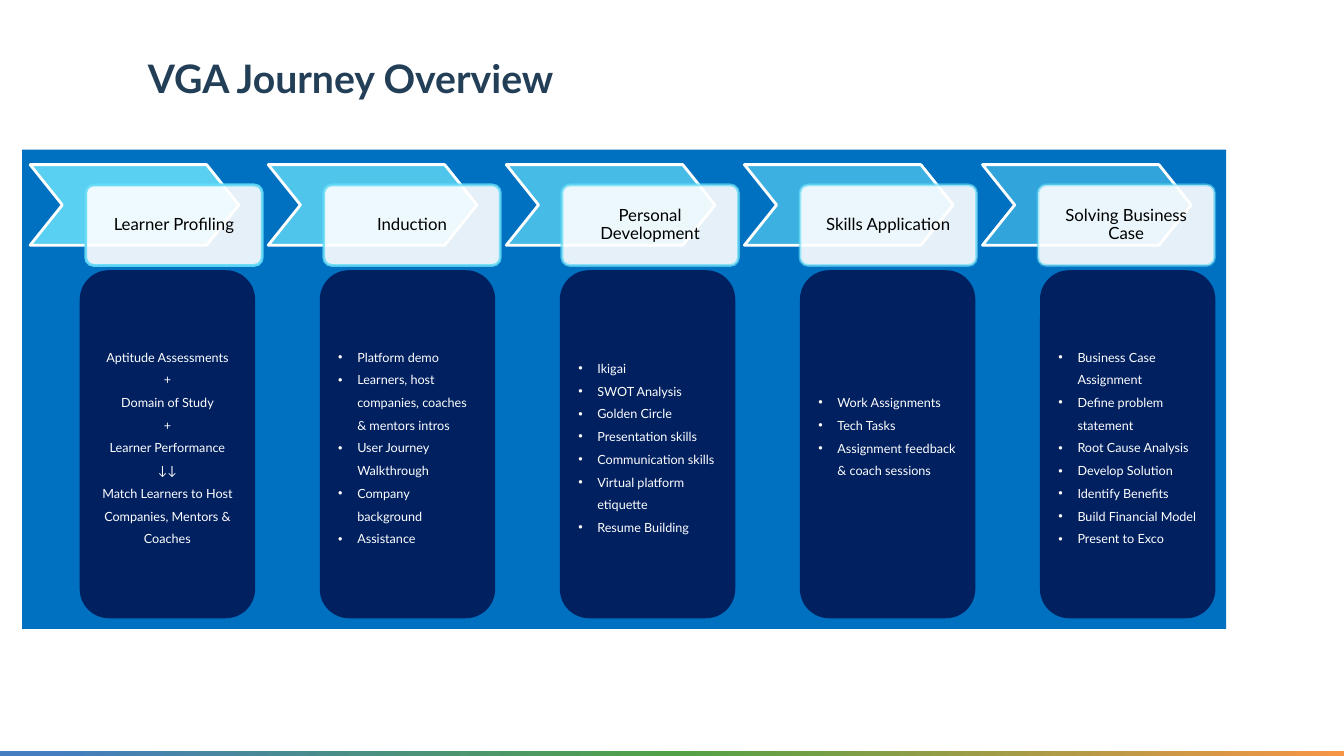
import copy

import lxml.etree
import pptx
import pptx.dml.color
import pptx.enum.shapes
import pptx.enum.text
import pptx.oxml.ns
import pptx.util

Cm = pptx.util.Cm
Pt = pptx.util.Pt
qn = pptx.oxml.ns.qn
SHAPE = pptx.enum.shapes.MSO_SHAPE
ALIGN = pptx.enum.text.PP_ALIGN
MIDDLE = pptx.enum.text.MSO_ANCHOR.MIDDLE

STAGES = [
    ("Learner Profiling", False,
     ["Aptitude Assessments", "+", "Domain of Study", "+", "Learner Performance", "↓↓",
      "Match Learners to Host Companies, Mentors & Coaches"]),
    ("Induction", True,
     ["Platform demo", "Learners, host companies, coaches & mentors intros",
      "User Journey Walkthrough", "Company background", "Assistance"]),
    ("Personal Development", True,
     ["Ikigai", "SWOT Analysis", "Golden Circle", "Presentation skills",
      "Communication skills", "Virtual platform etiquette", "Resume Building"]),
    ("Skills Application", True,
     ["Work Assignments", "Tech Tasks", "Assignment feedback & coach sessions"]),
    ("Solving Business Case", True,
     ["Business Case Assignment", "Define problem statement", "Root Cause Analysis",
      "Develop Solution", "Identify Benefits", "Build Financial Model", "Present to Exco"]),
]


def rgb(color):
    """Turn a hex string into a colour."""
    return pptx.dml.color.RGBColor.from_string(color)


def set_alpha(fill_parent, percent):
    """Make the solid fill held by an element partly transparent."""
    clr = fill_parent.find(qn("a:solidFill"))[0]
    lxml.etree.SubElement(clr, qn("a:alpha")).set("val", str(percent * 1000))


def add_box(slide, kind, x, y, w, h, fill, alpha=100, line=None, line_alpha=100):
    """Add a flat preset shape, measured in centimetres."""
    sp = slide.shapes.add_shape(kind, Cm(x), Cm(y), Cm(w), Cm(h))
    sp.shadow.inherit = False
    sp.fill.solid()
    sp.fill.fore_color.rgb = rgb(fill)
    if alpha < 100:
        set_alpha(sp._element.spPr, alpha)
    if line:
        sp.line.color.rgb = rgb(line)
        sp.line.width = Pt(2)
        if line_alpha < 100:
            set_alpha(sp.line._ln, line_alpha)
    else:
        sp.line.fill.background()
    return sp


def style(p, size, color, align, spacing=1.0, bold=False):
    """Format a paragraph and its runs."""
    p.alignment = align
    p.line_spacing = spacing
    for r in p.runs:
        r.font.name = "Lato"
        r.font.size = Pt(size)
        r.font.bold = bold
        r.font.color.rgb = rgb(color)


def add_bullet(p):
    """Give a paragraph a hanging white bullet."""
    pPr = p._p.get_or_add_pPr()
    pPr.set("marL", str(Cm(0.48)))
    pPr.set("indent", str(-Cm(0.48)))
    clr = lxml.etree.SubElement(pPr, qn("a:buClr"))
    lxml.etree.SubElement(clr, qn("a:srgbClr")).set("val", "FFFFFF")
    lxml.etree.SubElement(pPr, qn("a:buFont")).set("typeface", "Arial")
    lxml.etree.SubElement(pPr, qn("a:buChar")).set("char", "•")


def add_footer_bar(slide, x, y, w, h):
    """Draw the three-colour gradient strip."""
    sp = add_box(slide, SHAPE.RECTANGLE, x, y, w, h, "51A246")
    sp.fill.gradient()
    sp.fill.gradient_angle = 0
    stops = sp._element.spPr.find(qn("a:gradFill")).find(qn("a:gsLst"))
    stops.append(copy.deepcopy(stops[-1]))
    colors = [(0.04, "457DC0"), (0.5, "51A246"), (1, "F79546")]
    for stop, (position, color) in zip(sp.fill.gradient_stops, colors):
        stop.position = position
        stop.color.rgb = rgb(color)


def add_title(slide, x, y, w, h, text):
    """Write the slide title."""
    tf = slide.shapes.add_textbox(Cm(x), Cm(y), Cm(w), Cm(h)).text_frame
    tf.word_wrap = True
    tf.vertical_anchor = MIDDLE
    tf.margin_left = tf.margin_right = tf.margin_top = tf.margin_bottom = 0
    tf.text = text
    style(tf.paragraphs[0], 28, "233F57", ALIGN.LEFT, bold=True)


def add_step(slide, x, y, text, alpha):
    """Draw a chevron with its overlapping label."""
    sp = add_box(slide, SHAPE.CHEVRON, x, y, 5.26, 2.03, "63DBF7", alpha, "FFFFFF")
    sp.adjustments[0] = 0.4
    sp = add_box(slide, SHAPE.ROUNDED_RECTANGLE, x + 1.4, y + 0.51, 4.45, 2.03,
                 "FFFFFF", 90, "63DBF7", alpha)
    sp.adjustments[0] = 0.1
    tf = sp.text_frame
    tf.word_wrap = True
    tf.vertical_anchor = MIDDLE
    tf.margin_left = tf.margin_right = tf.margin_top = tf.margin_bottom = Cm(0.23)
    tf.text = text
    style(tf.paragraphs[0], 12, "000000", ALIGN.CENTER, 0.9)


def add_card(slide, x, y, w, h, lines, bulleted, lift=0):
    """Draw a dark card of details, raising its text by half the lift."""
    tf = add_box(slide, SHAPE.ROUNDED_RECTANGLE, x, y, w, h, "002060").text_frame
    tf.word_wrap = True
    tf.vertical_anchor = MIDDLE
    tf.margin_bottom = Cm(0.13 + lift)
    tf.text = "\n".join(lines)
    for p in tf.paragraphs:
        if bulleted:
            add_bullet(p)
        style(p, 9, "FFFFFF", ALIGN.LEFT if bulleted else ALIGN.CENTER, 1.5)


def add_journey(slide, x, y, w, h):
    """Draw the blue panel with its steps and cards."""
    add_box(slide, SHAPE.RECTANGLE, x, y, w, h, "0070C0")
    for i, (name, bulleted, lines) in enumerate(STAGES):
        add_step(slide, x + 0.2 + 6 * i, y + 0.38, name, 90 - 10 * i)
        lift = 0.57 if name == "Skills Application" else 0
        add_card(slide, x + 1.45 + 6.05 * i, y + 3.04, 4.42, 8.77, lines, bulleted, lift)


def main():
    """Build and save the slide."""
    prs = pptx.Presentation()
    prs.slide_width = Cm(33.87)
    prs.slide_height = Cm(19.05)
    slide = prs.slides.add_slide(prs.slide_layouts[6])
    add_footer_bar(slide, 0, 18.92, 33.87, 0.13)
    add_journey(slide, 0.56, 3.77, 30.34, 12.08)
    add_title(slide, 3.73, 1.33, 27.36, 1.24, "VGA Journey Overview")
    prs.save("out.pptx")


if __name__ == "__main__":
    main()
